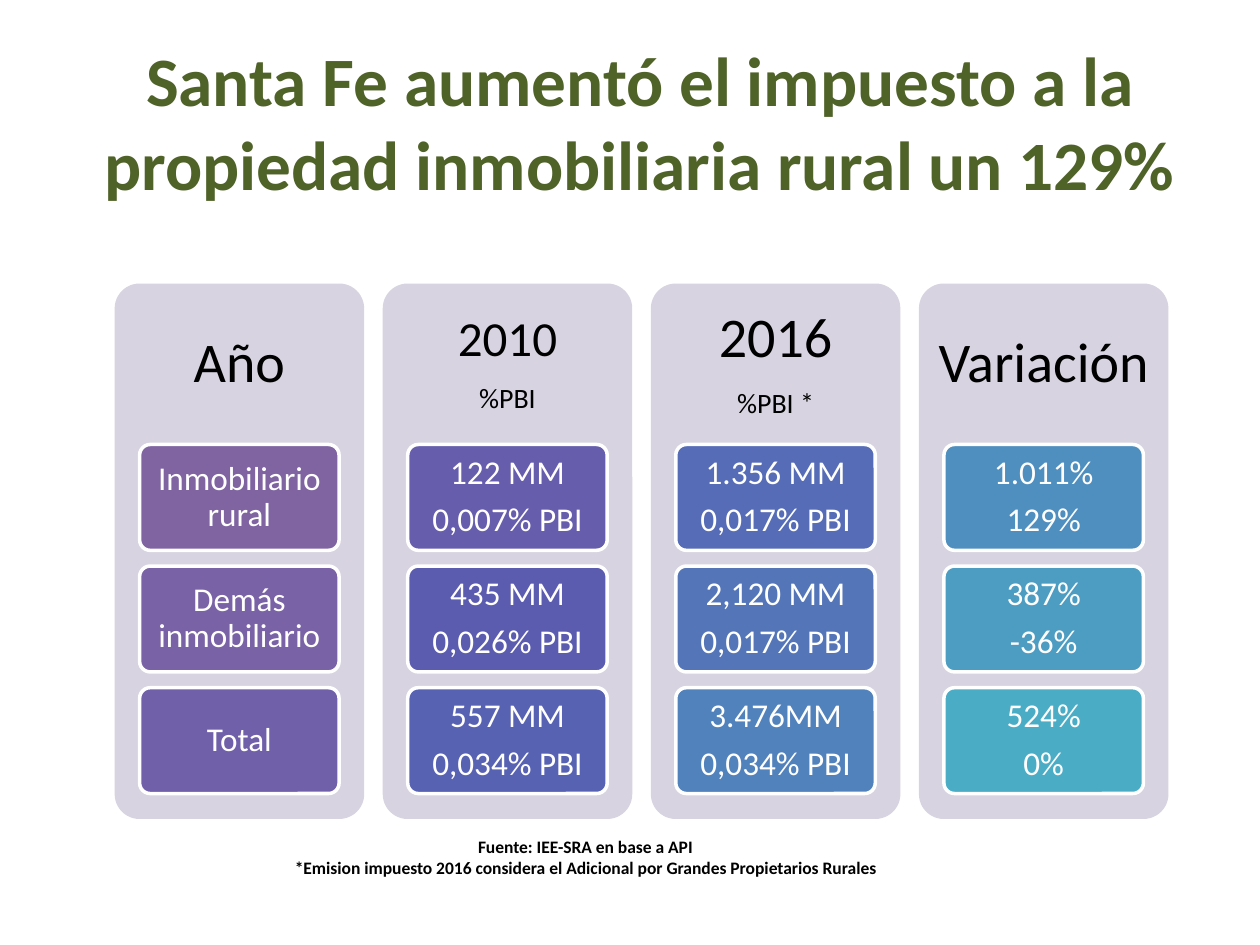
import pptx
import pptx.util
import pptx.dml.color
import pptx.enum.shapes
import pptx.enum.text

Pt = pptx.util.Pt
Anchor = pptx.enum.text.MSO_ANCHOR
Align = pptx.enum.text.PP_ALIGN

TITLE = "Santa Fe aumentó el impuesto a la propiedad inmobiliaria rural un 129%"
NOTES = ["Fuente: IEE-SRA en base a API",
         "*Emision impuesto 2016 considera el Adicional por Grandes Propietarios Rurales"]

# Each column: header lines, header sizes, then cards of (fill, lines)
COLUMNS = [
    (["Año"], [32], [
        ("8064A2", ["Inmobiliario rural"]),
        ("7962A5", ["Demás inmobiliario"]),
        ("705FA9", ["Total"])]),
    (["2010", "%PBI"], [28, 16], [
        ("665DAC", ["122 MM", "0,007% PBI"]),
        ("5B5BAF", ["435 MM", "0,026% PBI"]),
        ("5862B3", ["557 MM", "0,034% PBI"])]),
    (["2016", "%PBI *"], [32, 16], [
        ("566CB6", ["1.356 MM", "0,017% PBI"]),
        ("5476B9", ["2,120 MM", "0,017% PBI"]),
        ("5282BC", ["3.476MM", "0,034% PBI"])]),
    (["Variación"], [32], [
        ("4F8FC0", ["1.011%", "129%"]),
        ("4D9DC3", ["387%", "-36%"]),
        ("4BACC6", ["524%", "0%"])]),
]

LEFT, TOP, WIDTH, HEIGHT = 65.5, 162, 142.6, 306
COL_STEP = 153.2
HEAD = 92
CARD_W, CARD_H, CARD_STEP = 114, 60.5, 69.5


def color(code):
    return pptx.dml.color.RGBColor.from_string(code)


class Deck:
    """Holds the style and the current slide."""
    font = "Calibri"
    dark = "000000"
    light = "FFFFFF"
    green = "4F6228"
    panel = "D8D3E0"

    def __init__(self):
        self.file = pptx.Presentation()
        self.file.slide_width = Pt(720)
        self.file.slide_height = Pt(540)
        self.slide = self.file.slides.add_slide(self.file.slide_layouts[5])

    def label(self, shape, lines, sizes, ink, bold=False, pad=(7.2, 3.6),
              tight=False, anchor=Anchor.MIDDLE):
        """Fill a shape with centred lines; tight adds the card spacing."""
        frame = shape.text_frame
        frame.text = "\n".join(lines)
        frame.word_wrap = True
        frame.auto_size = pptx.enum.text.MSO_AUTO_SIZE.NONE
        frame.vertical_anchor = anchor
        frame.margin_left = frame.margin_right = Pt(pad[0])
        frame.margin_top = frame.margin_bottom = Pt(pad[1])
        for para, size in zip(frame.paragraphs, sizes):
            para.alignment = Align.CENTER
            para.font.name = self.font
            para.font.size = Pt(size)
            para.font.bold = bold
            para.font.color.rgb = color(ink)
            if tight:
                para.line_spacing = 0.9
                para.space_after = Pt(round(size * 0.35, 2))

    def title(self, text, x, y, w, h):
        shape = self.slide.shapes.title
        shape.left, shape.top, shape.width, shape.height = map(Pt, (x, y, w, h))
        self.label(shape, [text], [39.6], self.green, bold=True)

    def text(self, lines, sizes, x, y, w, h, **style):
        box = self.slide.shapes.add_textbox(Pt(x), Pt(y), Pt(w), Pt(h))
        self.label(box, lines, sizes, self.dark, **style)

    def block(self, fill, x, y, w, h):
        """Add a rounded rectangle without an outline."""
        shape = self.slide.shapes.add_shape(
            pptx.enum.shapes.MSO_SHAPE.ROUNDED_RECTANGLE, Pt(x), Pt(y), Pt(w), Pt(h))
        shape.adjustments[0] = 0.1
        shape.shadow.inherit = False
        shape.fill.solid()
        shape.fill.fore_color.rgb = color(fill)
        shape.line.fill.background()
        return shape

    def card(self, fill, lines, x, y):
        shape = self.block(fill, x, y, CARD_W, CARD_H)
        shape.line.color.rgb = color(self.light)
        shape.line.width = Pt(2)
        self.label(shape, lines, [19] * len(lines), self.light,
                   pad=(3.6, 2.9), tight=True)

    def column(self, x, head, sizes, cards):
        self.block(self.panel, x, TOP, WIDTH, HEIGHT)
        self.text(head, sizes, x, TOP, WIDTH, HEAD, pad=(9, 9), tight=True)
        inset = (WIDTH - CARD_W) / 2
        for row, (fill, lines) in enumerate(cards):
            self.card(fill, lines, x + inset, TOP + HEAD + row * CARD_STEP)


def main():
    deck = Deck()
    deck.title(TITLE, 42.5, 15, 646.5, 108)
    for index, (head, sizes, cards) in enumerate(COLUMNS):
        deck.column(LEFT + index * COL_STEP, head, sizes, cards)
    deck.text(NOTES, [10, 10], 156, 474, 357, 31.5, bold=True, anchor=Anchor.TOP)
    deck.file.save("out.pptx")


if __name__ == "__main__":
    main()
